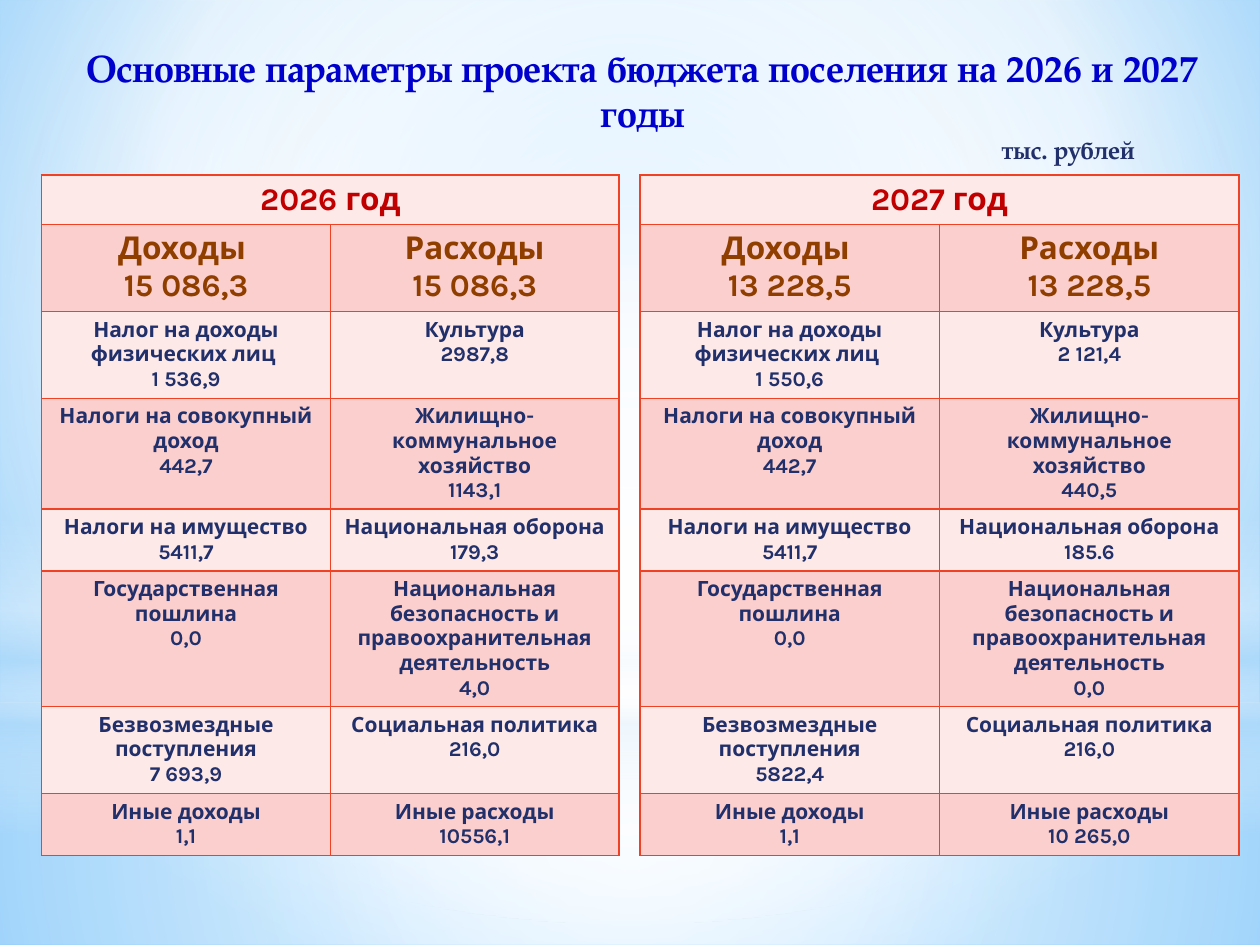
from lxml import etree
from pptx import Presentation
from pptx import util as u
from pptx.dml.color import RGBColor
from pptx.enum import shapes, text
from pptx.oxml import ns

SERIF, SANS = "TeX Gyre Pagella", "Karla"
NAVY, BROWN, RED, BLUE, BORDER = "21306A", "903E00", "C00000", "0000CC", "F14124"
BANDS = ("FCE9E8", "FACFCD")
ROW_HEIGHTS = (1, 1.75, 1.75, 2.22, 1.25, 2.72, 1.75, 1.25)
CENTER = (50, 50, 50, 50)

INCOME_NAMES = ("Доходы ", "Налог на доходы физических лиц ", "Налоги на совокупный доход",
                "Налоги на имущество", "Государственная пошлина",
                "Безвозмездные поступления", "Иные доходы")
EXPENSE_NAMES = ("Расходы", "Культура", "Жилищно-коммунальное хозяйство",
                 "Национальная оборона",
                 "Национальная безопасность и правоохранительная деятельность",
                 "Социальная политика", "Иные расходы")
BUDGETS = (
    ("2026 год", (0.84, 3.53, 11.64),
     ("15 086,3", "1 536,9", "442,7", "5411,7", "0,0", "7 693,9", "1,1"),
     ("15 086,3", "2987,8", "1143,1", "179,3", "4,0", "216,0", "10556,1")),
    ("2027 год", (12.9, 3.53, 12.08),
     ("13 228,5", "1 550,6", "442,7", "5411,7", "0,0", "5822,4", "1,1"),
     ("13 228,5", "2 121,4", "440,5", "185.6", "0,0", "216,0", "10 265,0")),
)
GLOWS = (
    ("RECTANGLE", (0, 14.17, 25.4, 4.88),
     ((0, "FFFFFF", 91), (37, "FFFFFF", 76), (100, "B4DCFA", 79)), CENTER),
    ("RECTANGLE", (0, 0, 25.4, 14.17),
     ((0, "FFFFFF", 89), (48, "FFFFFF", 62), (100, "B4DCFA", 79)), CENTER),
    ("RECTANGLE", (0, 10.46, 25.4, 6.35),
     ((0, "FFFFFF", 0), (29, "FFFFFF", 30), (45, "B4DCFA", 40),
      (55, "FFFFFF", 26), (65, "B4DCFA", 60), (100, "FFFFFF", 0)), None),
    ("OVAL", (0, 4.45, 25.4, 14.17), ((0, "FFFFFF", 100), (56, "FFFFFF", 0)), CENTER),
)


def color(value):
    """Turn a hex string into a colour."""
    return RGBColor.from_string(value)


def add_child(parent, tag, **attributes):
    """Append an XML child with the given attributes."""
    child = etree.SubElement(parent, ns.qn(tag))
    for name, value in attributes.items():
        child.set(name, str(value))
    return child


def set_gradient(solid, stops, focus):
    """Swap a solid fill for a radial gradient, or a vertical one without focus."""
    gradient = etree.Element(ns.qn("a:gradFill"), rotWithShape="1")
    stop_list = add_child(gradient, "a:gsLst")
    for position, value, opacity in stops:
        stop = add_child(stop_list, "a:gs", pos=position * 1000)
        stop_color = add_child(stop, "a:srgbClr", val=value)
        if opacity < 100:
            add_child(stop_color, "a:alpha", val=opacity * 1000)
    if focus:
        circle = add_child(gradient, "a:path", path="circle")
        sides = {side: part * 1000 for side, part in zip("ltrb", focus)}
        add_child(circle, "a:fillToRect", **sides)
    else:
        add_child(gradient, "a:lin", ang=5400000, scaled=0)
    solid.getparent().replace(solid, gradient)


def add_run(paragraph, words, size, value, font=SANS):
    """Add a bold run to a centred or aligned paragraph."""
    run = paragraph.add_run()
    run.text = words
    run.font.size, run.font.bold, run.font.name = u.Pt(size), True, font
    run.font.color.rgb = color(value)


def add_backdrop(slide):
    """Fill the background and lay the soft glows over it."""
    slide.background.fill.solid()
    solid = slide.element.find(".//" + ns.qn("p:bgPr")).find(ns.qn("a:solidFill"))
    set_gradient(solid, ((0, "9ED5FF", 100), (60, "FFFFFF", 100), (100, "5BB9FF", 100)),
                 (20, 10, 20, 60))
    for kind, box, stops, focus in GLOWS:
        shape = slide.shapes.add_shape(shapes.MSO_SHAPE[kind], *map(u.Cm, box))
        shape.shadow.inherit = False
        shape.line.fill.background()
        shape.fill.solid()
        set_gradient(shape.element.spPr.find(ns.qn("a:solidFill")), stops, focus)


def fit_frame(shape, box):
    """Place a text shape and give it a wrapping frame without insets."""
    shape.left, shape.top, shape.width, shape.height = map(u.Cm, box)
    frame = shape.text_frame
    frame.word_wrap = True
    frame.auto_size = text.MSO_AUTO_SIZE.NONE
    frame.vertical_anchor = text.MSO_ANCHOR.TOP
    frame.margin_left = frame.margin_right = frame.margin_top = frame.margin_bottom = 0
    return frame.paragraphs[0]


def add_heading(slide, left, top, width):
    """Place the title and the unit of measure under it."""
    title = slide.shapes.title
    slide.shapes.element.append(title.element)
    paragraph = fit_frame(title, (left, top, width, 1.8))
    paragraph.alignment = text.PP_ALIGN.CENTER
    add_run(paragraph, "Основные параметры проекта бюджета поселения на 2026 и 2027 годы",
            21.6, BLUE, SERIF)
    unit = slide.shapes.add_textbox(0, 0, 0, 0)
    paragraph = fit_frame(unit, (left + width - 6.9, top + 1.81, 5, 0.65))
    paragraph.alignment = text.PP_ALIGN.RIGHT
    add_run(paragraph, "тыс. рублей", 14.4, NAVY, SERIF)


def fill_cell(cell, lines, size, value, band):
    """Write centred lines into a cell and give it its fill and borders."""
    cell.fill.solid()
    cell.fill.fore_color.rgb = color(band)
    frame = cell.text_frame
    for index, words in enumerate(lines):
        paragraph = frame.add_paragraph() if index else frame.paragraphs[0]
        paragraph.alignment = text.PP_ALIGN.CENTER
        add_run(paragraph, words, size, value)
    properties = cell.fill._xPr
    for index, side in enumerate(("a:lnL", "a:lnR", "a:lnT", "a:lnB")):
        line = etree.Element(ns.qn(side), w=str(u.Pt(1)))
        add_child(add_child(line, "a:solidFill"), "a:srgbClr", val=BORDER)
        properties.insert(index, line)


def add_budget(slide, year, box, income, expenses):
    """Build the table of income and expenses for one year."""
    left, top, width = box
    frame = slide.shapes.add_table(len(ROW_HEIGHTS), 2, u.Cm(left), u.Cm(top),
                                   u.Cm(width), u.Cm(sum(ROW_HEIGHTS)))
    table = frame.table
    table.first_row = table.horz_banding = False
    for row, height in zip(table.rows, ROW_HEIGHTS):
        row.height = u.Cm(height)
    table.cell(0, 0).merge(table.cell(0, 1))
    fill_cell(table.cell(0, 0), (year,), 18, RED, BANDS[0])
    fill_cell(table.cell(0, 1), (), 18, RED, BANDS[0])
    for column, (names, amounts) in enumerate(((INCOME_NAMES, income),
                                               (EXPENSE_NAMES, expenses))):
        for row, lines in enumerate(zip(names, amounts), start=1):
            size, value = (18, BROWN) if row == 1 else (12, NAVY)
            fill_cell(table.cell(row, column), lines, size, value, BANDS[row % 2])


def main():
    """Build and save the budget slide."""
    presentation = Presentation()
    presentation.slide_width, presentation.slide_height = u.Cm(25.4), u.Cm(19.05)
    slide = presentation.slides.add_slide(presentation.slide_layouts[5])
    add_backdrop(slide)
    add_heading(slide, 1.14, 0.9, 23.63)
    for budget in BUDGETS:
        add_budget(slide, *budget)
    presentation.save("out.pptx")


if __name__ == "__main__":
    main()
